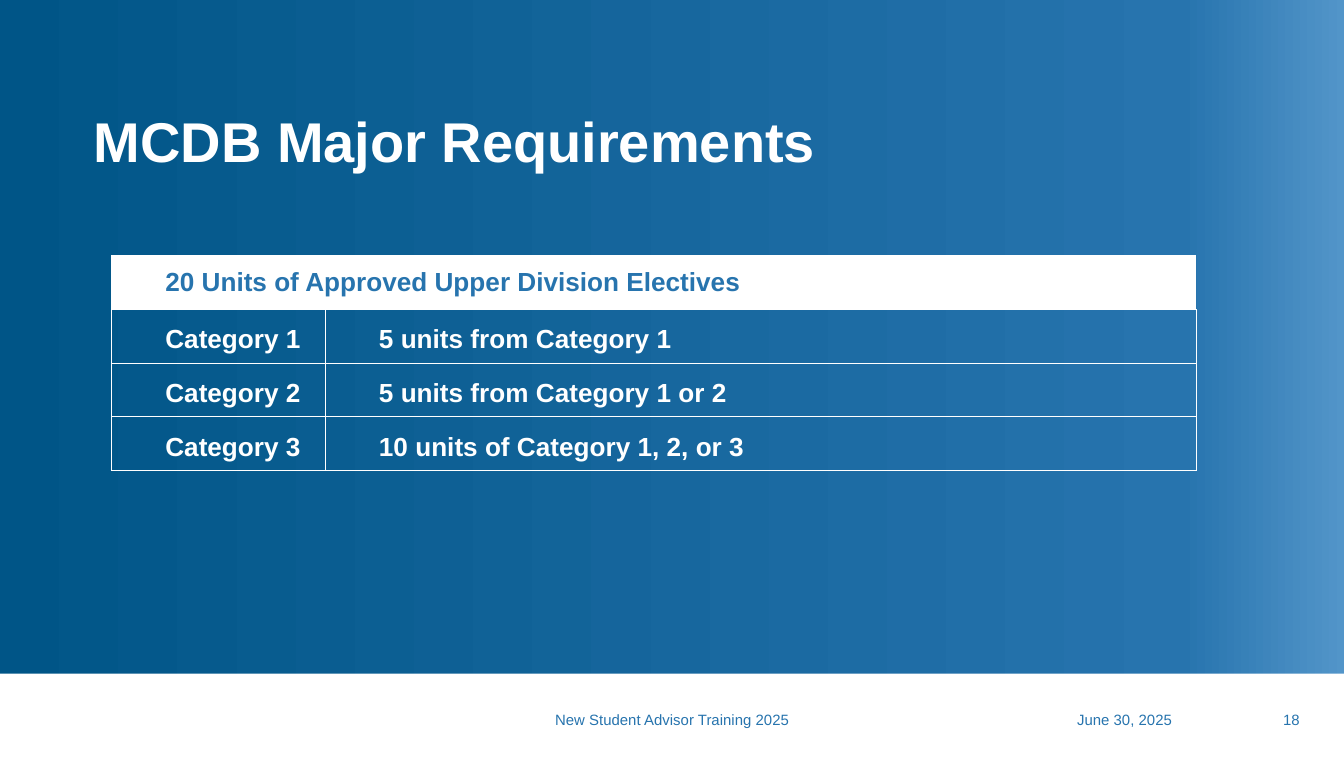
from copy import deepcopy

from lxml import etree
from pptx import Presentation
from pptx.dml.color import RGBColor
from pptx.enum.shapes import MSO_SHAPE
from pptx.enum.text import MSO_ANCHOR, PP_ALIGN
from pptx.oxml import parse_xml
from pptx.oxml.ns import nsdecls
from pptx.util import Inches, Pt

LEFT, RIGHT = PP_ALIGN.LEFT, PP_ALIGN.RIGHT
MIDDLE, BOTTOM = MSO_ANCHOR.MIDDLE, MSO_ANCHOR.BOTTOM
RECTANGLE = MSO_SHAPE.RECTANGLE
WHITE, BLUE, NAVY, SKY = "FFFFFF", "2774AE", "005587", "5295C9"


def color(value):
    return RGBColor.from_string(value)


def write(para, text, size, ink, bold=False):
    span = para.add_run()
    span.text = text
    span.font.name = "Arial"
    span.font.size = Pt(size)
    span.font.bold = bold
    span.font.color.rgb = color(ink)


deck = Presentation()
deck.slide_width, deck.slide_height = Inches(10), Inches(5.63)
page = deck.slides.add_slide(deck.slide_layouts[6])

# Background gradient with three stops
backdrop = page.background.fill
backdrop.gradient()
backdrop.gradient_angle = 0
stop_list = page.background._cSld.find(".//" + "{http://schemas.openxmlformats.org/drawingml/2006/main}gsLst")
stop_list.append(deepcopy(stop_list[-1]))
for stop, (position, value) in zip(backdrop.gradient_stops, [(0, NAVY), (0.88, BLUE), (1, SKY)]):
    stop.position = position
    stop.color.rgb = color(value)

# Footer band
band = page.shapes.add_shape(RECTANGLE, 0, Inches(5.01), Inches(10), Inches(0.62))
band.shadow.inherit = False
band.fill.solid()
band.fill.fore_color.rgb = color(WHITE)
band.line.fill.background()

footers = [
    ("New Student Advisor Training 2025", 4.13, 1.87, 0, LEFT),
    ("June 30, 2025", 7.32, 1.5, 0.1, RIGHT),
    ("18", 8.9, 0.87, 0.1, RIGHT),
]
for text, left, width, inset, align in footers:
    box = page.shapes.add_textbox(Inches(left), Inches(5.28), Inches(width), Inches(0.15))
    frame = box.text_frame
    frame.word_wrap = True
    frame.vertical_anchor = BOTTOM
    frame.margin_left, frame.margin_right = Inches(inset), Inches(0.1)
    frame.margin_top = frame.margin_bottom = Inches(0.01)
    para = frame.paragraphs[0]
    para.alignment = align
    write(para, text, 8, BLUE)

# Title
title = page.shapes.add_textbox(Inches(0.6), Inches(0.8), Inches(8), Inches(0.56))
title.text_frame.word_wrap = True
title_para = title.text_frame.paragraphs[0]
title_para.line_spacing = 0.9
write(title_para, "MCDB Major Requirements", 30, WHITE, bold=True)

# Electives table
rows = [
    ("20 Units of Approved Upper Division Electives", ""),
    ("Category 1", "5 units from Category 1"),
    ("Category 2", "5 units from Category 1 or 2"),
    ("Category 3", "10 units of Category 1, 2, or 3"),
]
table = page.shapes.add_table(
    len(rows), 2, Inches(0.83), Inches(1.9), Inches(8.07), Inches(1.6)
).table
table.first_row = table.horz_banding = False
for column, width in zip(table.columns, (1.59, 6.48)):
    column.width = Inches(width)
table.cell(0, 0).merge(table.cell(0, 1))

for row_index, texts in enumerate(rows):
    header = row_index == 0
    for column_index, text in enumerate(texts):
        cell = table.cell(row_index, column_index)
        cell.vertical_anchor = MIDDLE
        cell.margin_left = Inches(0.4)
        cell.margin_top = Inches(0 if header else 0.05)
        cell.margin_right = cell.margin_bottom = 0
        if header:
            cell.fill.solid()
            cell.fill.fore_color.rgb = color(WHITE)
        else:
            cell.fill.background()
        if text:
            write(cell.text_frame.paragraphs[0], text, 14, BLUE if header else WHITE, bold=True)
        properties = cell._tc.get_or_add_tcPr()
        for order, side in enumerate(("lnL", "lnR", "lnT", "lnB")):
            edge = BLUE if header and side == "lnR" else WHITE
            border = parse_xml(f'<a:{side} {nsdecls("a")} w="{Pt(0.5)}"/>')
            fill = etree.SubElement(border, border.tag.replace(side, "solidFill"))
            etree.SubElement(fill, border.tag.replace(side, "srgbClr"), val=edge)
            properties.insert(order, border)

deck.save("out.pptx")
